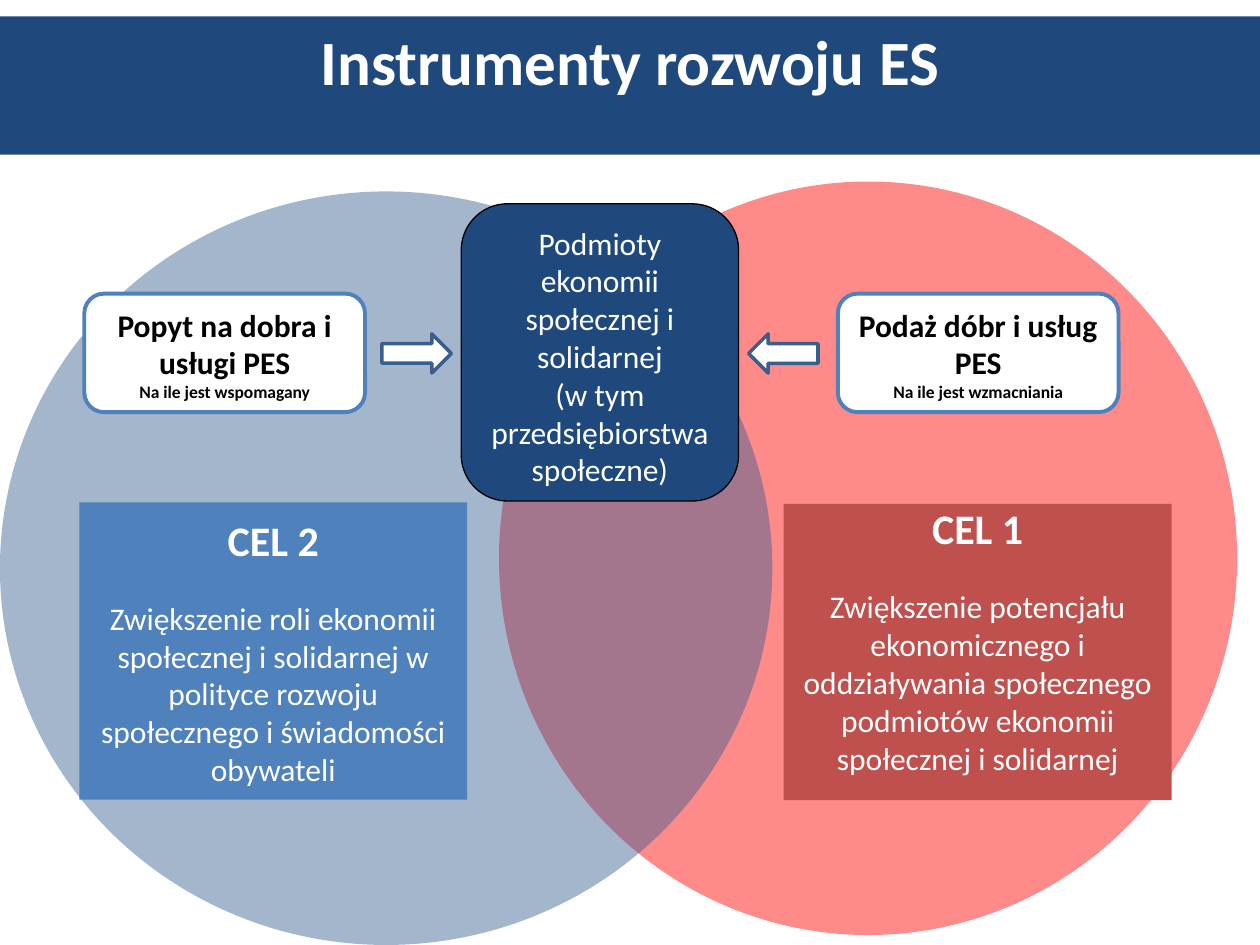
"""Build the slide on instruments for developing the social economy."""
from lxml.etree import SubElement
from pptx import Presentation
from pptx.dml.color import RGBColor
from pptx.enum.shapes import MSO_SHAPE as Kind
from pptx.enum.text import MSO_ANCHOR as Anchor, PP_ALIGN as Align
from pptx.oxml.ns import qn
from pptx.util import Cm, Pt

NAVY = RGBColor(0x1F, 0x49, 0x7D)
BLUE = RGBColor(0x4F, 0x81, 0xBD)
STEEL = RGBColor(0x37, 0x60, 0x92)
EDGE = RGBColor(0x3A, 0x5F, 0x8C)
BRICK = RGBColor(0xC0, 0x50, 0x4D)
RED = RGBColor(0xFF, 0x00, 0x00)
WHITE = RGBColor(0xFF, 0xFF, 0xFF)
BLACK = RGBColor(0x00, 0x00, 0x00)


def draw(kind, box, fill, line=None, width=0):
    shape = slide.shapes.add_shape(kind, *[Cm(n) for n in box])
    shape.shadow.inherit = False
    shape.fill.solid()
    shape.fill.fore_color.rgb = fill
    if line is None:
        shape.line.fill.background()
    else:
        shape.line.color.rgb = line
        shape.line.width = Pt(width)
    return shape


def write(shape, rows, color, anchor=Anchor.TOP):
    frame = shape.text_frame
    frame.word_wrap = True
    frame.vertical_anchor = anchor
    frame.text = "\n".join(text for text, size, bold in rows)
    for para, (text, size, bold) in zip(frame.paragraphs, rows):
        para.alignment = Align.CENTER
        font = para.runs[0].font
        font.name = "Calibri"
        font.size = Pt(size)
        font.bold = bold
        font.color.rgb = color
    return frame


deck = Presentation()
deck.slide_width = Cm(25.4)
deck.slide_height = Cm(19.05)
slide = deck.slides.add_slide(deck.slide_layouts[6])

for box, color in [
    ((10.06, 3.66, 14.88, 15.19), RED),
    ((0, 3.86, 15.57, 15.19), STEEL),
]:
    disc = draw(Kind.OVAL, box, color)
    tint = disc.fill._xPr.find(qn("a:solidFill"))[0]
    SubElement(tint, qn("a:alpha"), val="46000")

hub = draw(Kind.ROUNDED_RECTANGLE, (9.3, 4.11, 5.59, 5.99), NAVY, BLACK, 0.75)
write(hub, [
    ("Podmioty ekonomii społecznej i solidarnej", 18, False),
    ("(w tym przedsiębiorstwa społeczne)", 18, False),
], WHITE)

for left, head, note in [
    (1.7, "Popyt na dobra i usługi PES", "Na ile jest wspomagany"),
    (16.89, "Podaż dóbr i usług PES", "Na ile jest wzmacniania"),
]:
    card = draw(Kind.ROUNDED_RECTANGLE, (left, 5.92, 5.66, 2.39), WHITE, BLUE, 2.25)
    write(card, [(head, 18, True), (note, 10, True)], BLACK)

for left, turn in [(7.7, 0), (15.09, 180)]:
    arrow = draw(Kind.RIGHT_ARROW, (left, 6.73, 1.4, 0.79), WHITE, EDGE, 2)
    arrow.rotation = turn

band = draw(Kind.RECTANGLE, (0, 0.33, 25.4, 2.79), NAVY)
write(band, [("Instrumenty rozwoju ES", 36, True)], WHITE)

for box, color, head, goal, top, base in [
    ((15.8, 10.16, 7.82, 5.97), BRICK, "CEL 1",
     "Zwiększenie potencjału ekonomicznego i oddziaływania społecznego "
     "podmiotów ekonomii społecznej i solidarnej", 0, 0.5),
    ((1.6, 10.13, 7.82, 5.99), BLUE, "CEL 2",
     "Zwiększenie roli ekonomii społecznej i solidarnej w polityce rozwoju "
     "społecznego i świadomości obywateli", 0.13, 0.13),
]:
    panel = draw(Kind.RECTANGLE, box, color)
    frame = write(panel, [(head, 24, True), (goal, 18, False)], WHITE, Anchor.MIDDLE)
    frame.margin_top = Cm(top)
    frame.margin_bottom = Cm(base)
    frame.paragraphs[0].space_after = Pt(19.5)

deck.save("out.pptx")
